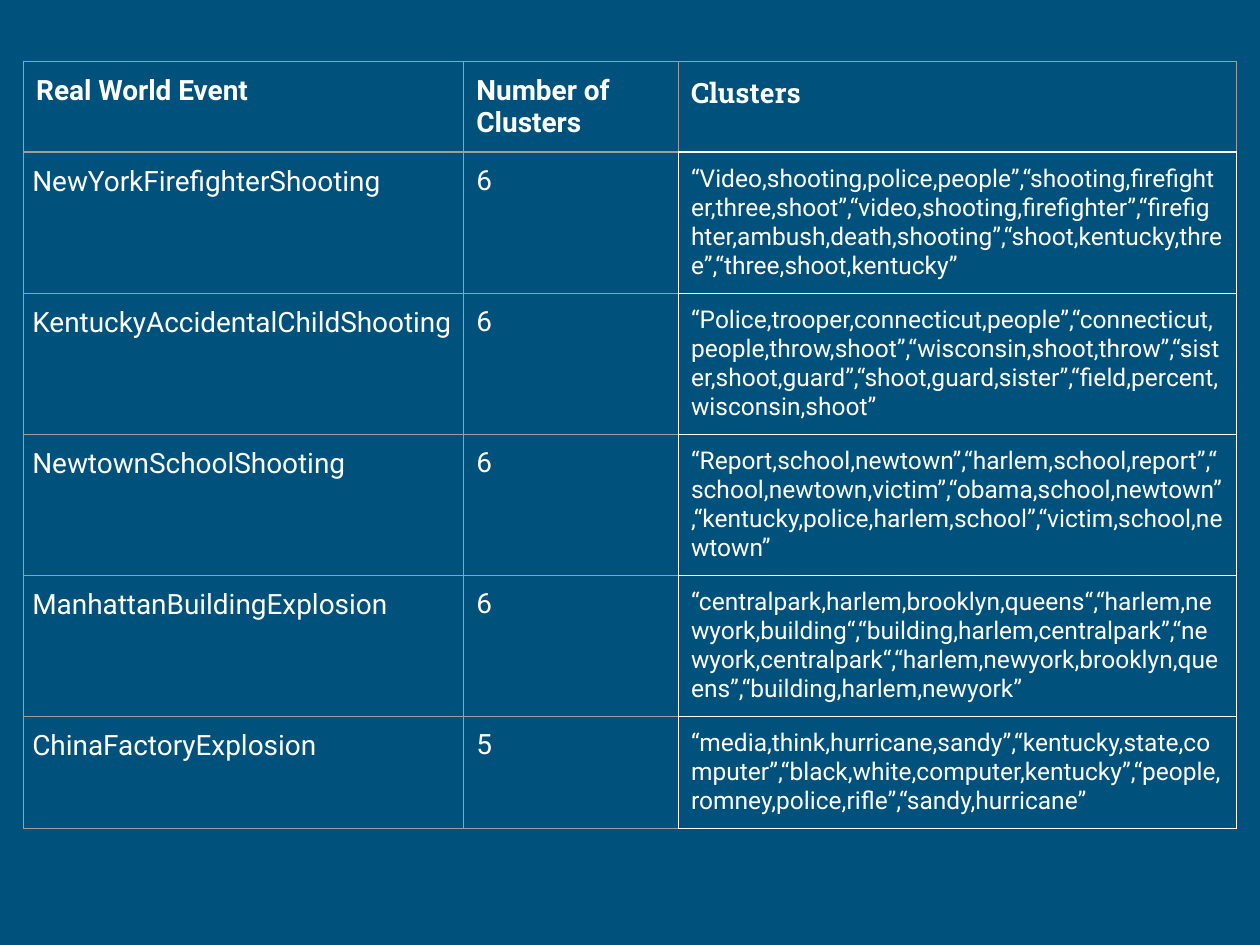
from lxml import etree
from pptx import Presentation
from pptx import util as u
from pptx.dml.color import RGBColor
from pptx.oxml import ns

NAVY = RGBColor(0x00, 0x51, 0x7C)
WHITE = RGBColor(0xFF, 0xFF, 0xFF)
GREY = RGBColor(0x9E, 0x9E, 0x9E)

COLUMN_WIDTHS = (251.6, 122.6, 318.8)
ROW_HEIGHTS = (51.4, 80.57, 80.57, 80.57, 80.57, 64)
HEADINGS = ("Real World Event", "Number of Clusters", "Clusters")
EVENTS = (
    ("NewYorkFirefighterShooting", "6",
     "“Video,shooting,police,people”,“shooting,firefighter,three,shoot”,"
     "“video,shooting,firefighter”,“firefighter,ambush,death,shooting”,"
     "“shoot,kentucky,three”,“three,shoot,kentucky”"),
    ("KentuckyAccidentalChildShooting", "6",
     "“Police,trooper,connecticut,people”,“connecticut,people,throw,shoot”,"
     "“wisconsin,shoot,throw”,“sister,shoot,guard”,"
     "“shoot,guard,sister”,“field,percent,wisconsin,shoot”"),
    ("NewtownSchoolShooting", "6",
     "“Report,school,newtown”,“harlem,school,report”,"
     "“school,newtown,victim”,“obama,school,newtown”,"
     "“kentucky,police,harlem,school”,“victim,school,newtown”"),
    ("ManhattanBuildingExplosion", "6",
     "“centralpark,harlem,brooklyn,queens“,“harlem,newyork,building“,"
     "“building,harlem,centralpark”,“newyork,centralpark“,"
     "“harlem,newyork,brooklyn,queens”,“building,harlem,newyork”"),
    ("ChinaFactoryExplosion", "5",
     "“media,think,hurricane,sandy”,“kentucky,state,computer”,"
     "“black,white,computer,kentucky”,“people,romney,police,rifle”,"
     "“sandy,hurricane”"),
)


def set_borders(cell, left=GREY, right=GREY, top=GREY, bottom=GREY):
    """Draw the four edges of a cell in the given colours."""
    properties = cell._tc.get_or_add_tcPr()
    for side, color in zip("LRTB", (left, right, top, bottom)):
        line = etree.SubElement(properties, ns.qn(f"a:ln{side}"), w=str(u.Pt(0.75)))
        fill = etree.SubElement(line, ns.qn("a:solidFill"))
        etree.SubElement(fill, ns.qn("a:srgbClr"), val=str(color))


def write_cell(cell, words, *, size=16, font="Roboto", bold=False,
               spacing=None, inset=7.2, **borders):
    """Put formatted text in an unfilled, bordered cell."""
    cell.margin_left = cell.margin_right = u.Pt(inset)
    cell.margin_top = cell.margin_bottom = u.Pt(inset)
    set_borders(cell, **borders)
    cell.fill.background()
    para = cell.text_frame.paragraphs[0]
    if spacing:
        para.line_spacing = spacing
    span = para.add_run()
    span.text = words
    span.font.size = u.Pt(size)
    span.font.name = font
    span.font.bold = bold
    span.font.color.rgb = WHITE


def add_grid(page, left, top):
    """Add an empty table with the set column widths and row heights."""
    table = page.shapes.add_table(
        len(ROW_HEIGHTS), len(COLUMN_WIDTHS), u.Pt(left), u.Pt(top),
        u.Pt(sum(COLUMN_WIDTHS)), u.Pt(sum(ROW_HEIGHTS))).table
    table.horz_banding = False
    for column, width in zip(table.columns, COLUMN_WIDTHS):
        column.width = u.Pt(width)
    for row, height in zip(table.rows, ROW_HEIGHTS):
        row.height = u.Pt(height)
    return table


def fill_headings(table):
    """Write the heading row."""
    styles = ({}, {}, {"font": "Roboto Slab", "bottom": WHITE})
    for column, (words, style) in enumerate(zip(HEADINGS, styles)):
        write_cell(table.cell(0, column), words, bold=True, **style)


def fill_events(table):
    """Write one row for each event."""
    white_edges = dict.fromkeys(("left", "right", "top", "bottom"), WHITE)
    styles = ({"spacing": 1.15, "inset": 5}, {"right": WHITE},
              {"size": 14, **white_edges})
    for row, event in enumerate(EVENTS, start=1):
        for column, (words, style) in enumerate(zip(event, styles)):
            write_cell(table.cell(row, column), words, **style)


def main():
    """Build the slide and save it."""
    deck = Presentation()
    deck.slide_width, deck.slide_height = u.Pt(720), u.Pt(540)
    page = deck.slides.add_slide(deck.slide_layouts[6])
    page.background.fill.solid()
    page.background.fill.fore_color.rgb = NAVY
    table = add_grid(page, 13.5, 35.2)
    fill_headings(table)
    fill_events(table)
    deck.save("out.pptx")


if __name__ == "__main__":
    main()
